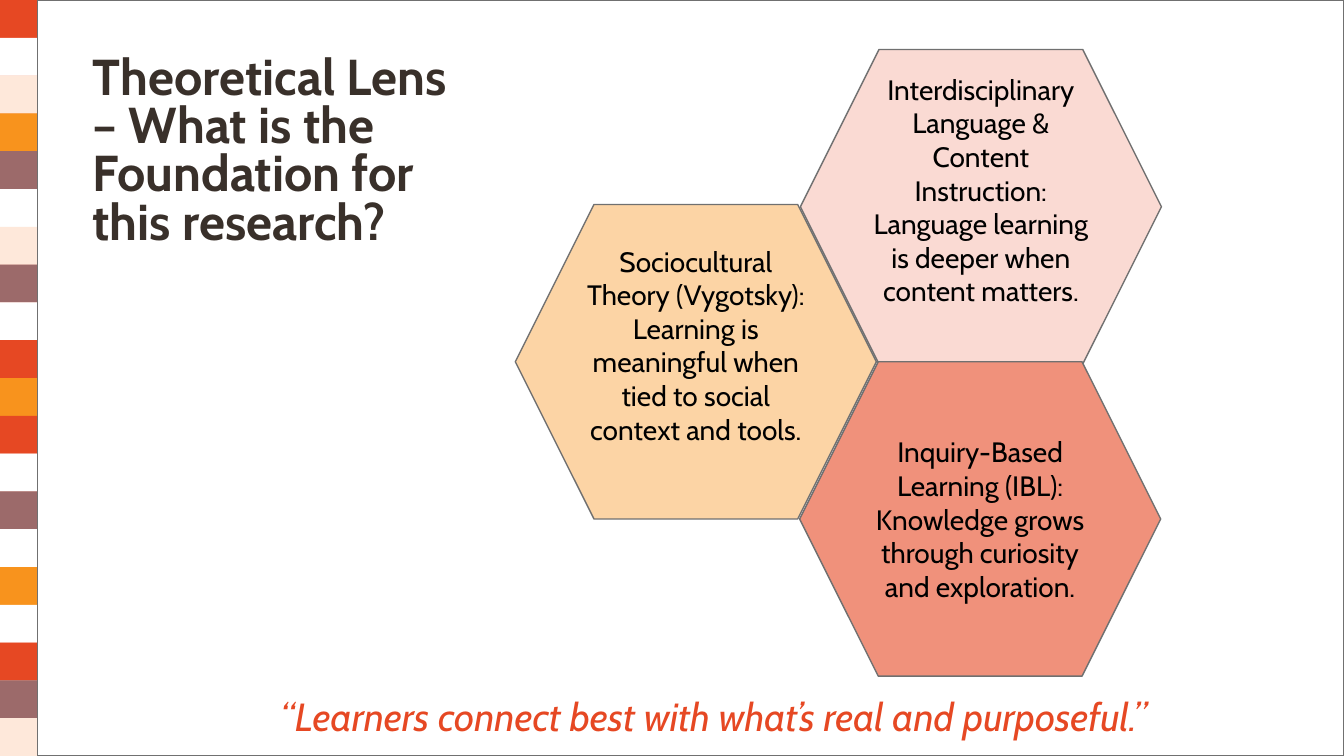
from dataclasses import dataclass
from pptx import Presentation
from pptx.dml.color import RGBColor
from pptx.enum.shapes import MSO_SHAPE
from pptx.enum.text import MSO_ANCHOR, PP_ALIGN
from pptx.shapes.autoshape import Shape
from pptx.slide import Slide
from pptx.util import Inches, Length, Pt

RECT = MSO_SHAPE.RECTANGLE
HEX = MSO_SHAPE.HEXAGON
TOP, MIDDLE = MSO_ANCHOR.TOP, MSO_ANCHOR.MIDDLE
LEFT, CENTER = PP_ALIGN.LEFT, PP_ALIGN.CENTER

WHITE = RGBColor(0xFF, 0xFF, 0xFF)
BLACK = RGBColor(0, 0, 0)
BROWN = RGBColor(0x39, 0x30, 0x2A)
GRAY = RGBColor(0x70, 0x70, 0x70)
RED = RGBColor(0xE6, 0x48, 0x23)
ORANGE = RGBColor(0xF8, 0x93, 0x1D)
MAUVE = RGBColor(0x9C, 0x6A, 0x6A)
CREAM = RGBColor(0xFE, 0xE8, 0xDA)
SAND = RGBColor(0xFC, 0xD4, 0xA5)
BLUSH = RGBColor(0xFA, 0xDA, 0xD3)
CORAL = RGBColor(0xF0, 0x91, 0x7B)
SALMON = RGBColor(0xF5, 0xB5, 0xA7)

FONT = "Cabin"
WIDE, HIGH = 13.33, 7.5
ROWS = 20
CELL = HIGH / ROWS
COLS = WIDE / CELL
HEX_W, HEX_H = 9.55, 8.32

STRIP = (
    RED, WHITE, CREAM, ORANGE, MAUVE, WHITE, CREAM, MAUVE, WHITE, RED,
    ORANGE, RED, WHITE, MAUVE, WHITE, ORANGE, WHITE, RED, MAUVE, CREAM,
)


@dataclass(frozen=True)
class Area:
    col: float
    row: float
    cols: float
    rows: float

    def box(self) -> tuple[Length, ...]:
        sides = (self.col, self.row, self.cols, self.rows)
        return tuple(Inches(side * CELL) for side in sides)


@dataclass(frozen=True)
class Style:
    size: int
    color: RGBColor
    bold: bool = False
    italic: bool = False
    align: PP_ALIGN = LEFT
    anchor: MSO_ANCHOR = TOP
    space: float = 1.0


@dataclass(frozen=True)
class Theory:
    col: float
    row: float
    fill: RGBColor
    text: str
    lift: int = 0


TITLE = Style(36, BROWN, bold=True, space=0.8)
QUOTE = Style(28, RED, italic=True, space=0.9)
LABEL = Style(20, BLACK, align=CENTER, anchor=MIDDLE)

THEORIES = (
    Theory(13.63, 5.41, SAND,
           "Sociocultural Theory (Vygotsky): Learning is meaningful when "
           "tied to social context and tools.", 1),
    Theory(21.17, 1.31, BLUSH,
           "Interdisciplinary Language & Content Instruction: Language "
           "learning is deeper when content matters.", 1),
    Theory(21.15, 9.57, CORAL,
           "Inquiry-Based Learning (IBL): Knowledge grows through "
           "curiosity and exploration."),
)


def draw(slide: Slide, kind: MSO_SHAPE, area: Area, fill: RGBColor,
         edge: bool = False) -> Shape:
    shape = slide.shapes.add_shape(kind, *area.box())
    shape.shadow.inherit = False
    shape.fill.solid()
    shape.fill.fore_color.rgb = fill
    if edge:
        shape.line.color.rgb = GRAY
        shape.line.width = Pt(1)
    else:
        shape.line.fill.background()
    return shape


def write(shape: Shape, text: str, style: Style) -> None:
    frame = shape.text_frame
    frame.word_wrap = True
    frame.vertical_anchor = style.anchor
    frame.text = text
    para = frame.paragraphs[0]
    para.alignment = style.align
    para.line_spacing = style.space
    font = para.runs[0].font
    font.name = FONT
    font.size = Pt(style.size)
    font.bold = style.bold
    font.italic = style.italic
    font.color.rgb = style.color


def main() -> None:
    deck = Presentation()
    deck.slide_width, deck.slide_height = Inches(WIDE), Inches(HIGH)
    slide = deck.slides.add_slide(deck.slide_layouts[6])
    slide.background.fill.solid()
    slide.background.fill.fore_color.rgb = SALMON

    for row, color in enumerate(STRIP):
        draw(slide, RECT, Area(0, row, 1, 1), color)
    draw(slide, RECT, Area(1, 0, COLS - 1, ROWS), WHITE, edge=True)

    title = slide.shapes.add_textbox(*Area(2.45, 1.36, 10.24, 5.2).box())
    title.text_frame.margin_left = 0
    write(title, "Theoretical Lens – What is the Foundation for this research?",
          TITLE)

    quote = slide.shapes.add_textbox(*Area(7.15, 18.32, 24.24, 1.6).box())
    write(quote, "“Learners connect best with what’s real and purposeful.”",
          QUOTE)

    for item in THEORIES:
        area = Area(item.col, item.row, HEX_W, HEX_H)
        shape = draw(slide, HEX, area, item.fill, edge=True)
        shape.text_frame.margin_bottom = Inches(0.05 + item.lift / 3)
        write(shape, item.text, LABEL)

    deck.save("out.pptx")


if __name__ == "__main__":
    main()
